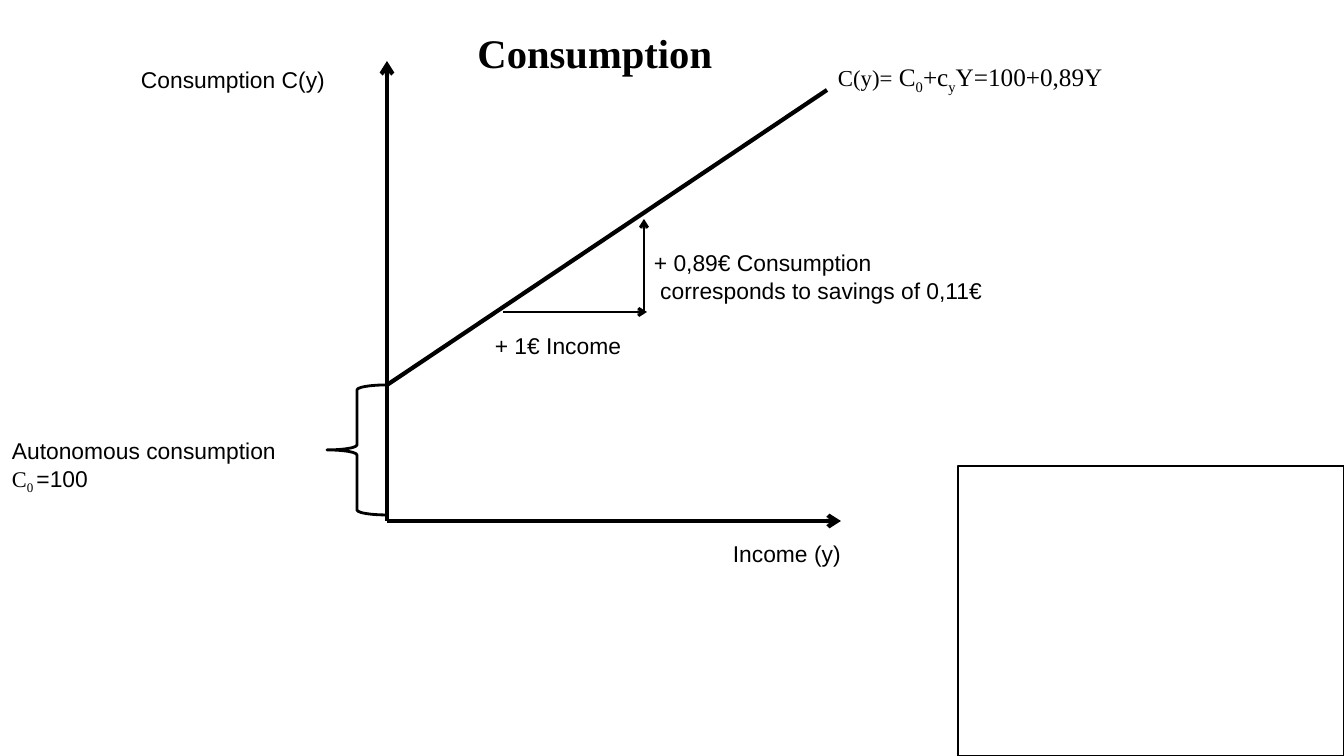
from lxml.etree import SubElement
from pptx import Presentation
from pptx.dml.color import RGBColor
from pptx.enum.shapes import MSO_CONNECTOR, MSO_SHAPE
from pptx.enum.text import MSO_ANCHOR, MSO_AUTO_SIZE, PP_ALIGN
from pptx.oxml.ns import qn
from pptx.util import Emu, Pt

BLACK = RGBColor(0x00, 0x00, 0x00)
WHITE = RGBColor(0xFF, 0xFF, 0xFF)
SANS = "Arial"
SERIF = "Times New Roman"
BODY_SIZE = 16.3
SUBSCRIPT = -25000
EMU_PER_PX = 12192000 / 1344


def px(length):
    """Turn a length in px into EMU."""
    return Emu(round(length * EMU_PER_PX))


class Diagram:
    """Hold the style and the current page, and draw each kind of element."""

    def __init__(self, deck):
        """Add a white title-only page to the deck."""
        self.page = deck.slides.add_slide(deck.slide_layouts[5])
        self.page.background.fill.solid()
        self.page.background.fill.fore_color.rgb = WHITE

    def span(self, para, text, font=SANS, size=BODY_SIZE, baseline=0, bold=False):
        """Add one formatted run to a paragraph."""
        run = para.add_run()
        run.text = text
        run.font.name = font
        run.font.size = Pt(size)
        run.font.bold = bold
        run.font.color.rgb = BLACK
        if baseline:
            run.font._element.set("baseline", str(baseline))

    def title(self, text, left, top, width, height):
        """Place and format the title placeholder."""
        box = self.page.shapes.title
        box.left, box.top, box.width, box.height = map(px, (left, top, width, height))
        frame = box.text_frame
        frame.auto_size = MSO_AUTO_SIZE.NONE
        frame.vertical_anchor = MSO_ANCHOR.MIDDLE
        para = frame.paragraphs[0]
        para.alignment = PP_ALIGN.CENTER
        self.span(para, text, SERIF, 29, bold=True)

    def label(self, left, top, width, height, *lines, wrap=False):
        """Add a text box and return one paragraph for each list of spans."""
        box = self.page.shapes.add_textbox(*map(px, (left, top, width, height)))
        frame = box.text_frame
        frame.word_wrap = wrap
        frame.auto_size = MSO_AUTO_SIZE.SHAPE_TO_FIT_TEXT
        for index, spans in enumerate(lines):
            para = frame.add_paragraph() if index else frame.paragraphs[0]
            for position, (text, *style) in enumerate(spans):
                if text == "\n":
                    para.add_line_break()
                else:
                    self.span(para, text, *style)

    def line(self, start, end, weight, arrow=False):
        """Draw a straight line, with an arrowhead at its end if asked."""
        connector = self.page.shapes.add_connector(
            MSO_CONNECTOR.STRAIGHT, *map(px, (*start, *end)))
        connector.line.color.rgb = BLACK
        connector.line.width = Pt(weight)
        if arrow:
            SubElement(connector.line._get_or_add_ln(), qn("a:tailEnd"), type="arrow")
        SubElement(connector._element.spPr, qn("a:effectLst"))

    def outline(self, kind, left, top, width, height, weight):
        """Draw an unfilled preset shape."""
        shape = self.page.shapes.add_shape(kind, *map(px, (left, top, width, height)))
        shape.shadow.inherit = False
        shape.fill.background()
        shape.line.color.rgb = BLACK
        shape.line.width = Pt(weight)


def main():
    """Build the consumption function page."""
    deck = Presentation()
    deck.slide_width, deck.slide_height = px(1344), px(756)
    diagram = Diagram(deck)
    diagram.title("Consumption", 176, 11, 838, 82)

    origin, intercept = (387, 521), (387, 385)
    diagram.line(origin, (841, 521), 3, arrow=True)
    diagram.line(origin, (387, 61), 3, arrow=True)
    diagram.line(intercept, (827, 90), 3)
    diagram.outline(MSO_SHAPE.LEFT_BRACE, 327, 385, 60, 130, 2)

    diagram.label(2, 432, 287, 66,
                  [("Autonomous consumption",)],
                  [("C", SERIF, 16), ("0 ", SERIF, 16, SUBSCRIPT), ("=100",)])
    diagram.label(723, 535, 130, 38, [("Income (y)",)])
    diagram.label(131, 61, 246, 38, [("Consumption C(y)",)], wrap=True)

    diagram.line((503, 312), (647, 312), 2, arrow=True)
    diagram.line((644, 312), (644, 219), 2, arrow=True)
    diagram.label(644, 244, 353, 66,
                  [("+ 0,89€ Consumption",), ("\n",),
                   (" corresponds to savings of 0,11€",)])
    diagram.label(485, 327, 255, 38, [("+ 1€ Income",)], wrap=True)
    diagram.label(828, 56, 290, 40,
                  [("C(y)=", SERIF), (" C", SERIF, 18), ("0", SERIF, 18, SUBSCRIPT),
                   ("+c", SERIF, 18), ("y", SERIF, 18, SUBSCRIPT),
                   ("Y=100+0,89Y", SERIF, 18)])
    diagram.outline(MSO_SHAPE.RECTANGLE, 958, 466, 386, 290, 1)

    deck.save("out.pptx")


if __name__ == "__main__":
    main()
